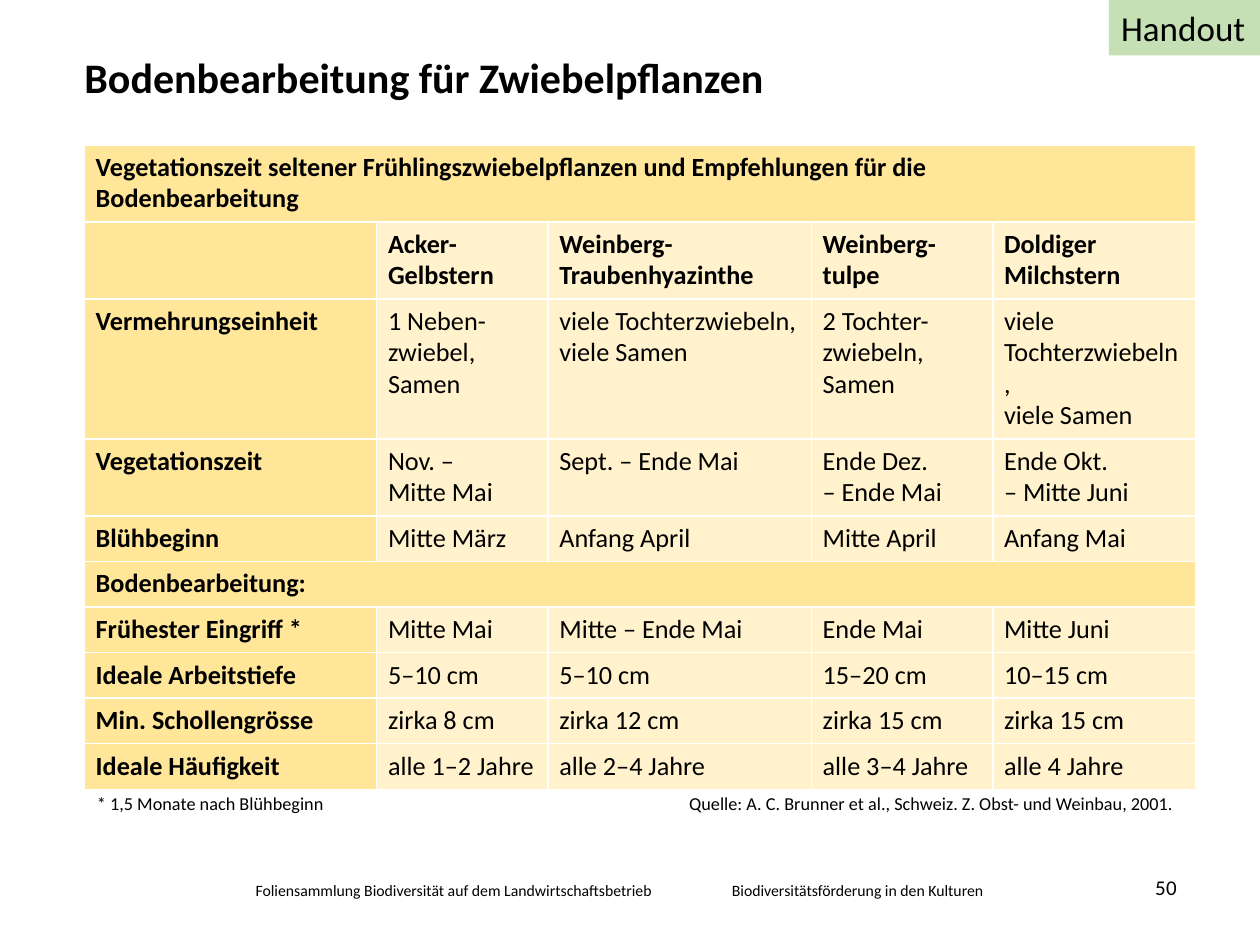
from dataclasses import dataclass

import pptx
import pptx.dml.color
import pptx.enum.shapes
import pptx.enum.text
import pptx.oxml
import pptx.oxml.ns
import pptx.util
from pptx.util import Inches

ALIGN = pptx.enum.text.PP_ALIGN
ANCHOR = pptx.enum.text.MSO_ANCHOR
FONT = "Calibri"
COLORS = {
    "text": "000000",
    "handout": "C5E0B4",
    "heading": "FFE699",
    "body": "FFF2CC",
    "border": "FFFFFF",
}


@dataclass
class Label:
    text: str
    left: float
    top: float
    width: float
    height: float
    size: float
    align: ALIGN = ALIGN.LEFT
    raised: bool = False
    wrap: bool = False


LABELS = [
    Label("Foliensammlung Biodiversität auf dem Landwirtschaftsbetrieb",
          1.93, 6.94, 3.46, 0.25, 9, wrap=True),
    Label("Biodiversitätsförderung in den Kulturen",
          5.71, 6.94, 2.28, 0.25, 9, wrap=True),
    Label("* 1,5 Monate nach Blühbeginn",
          0.67, 6.21, 2.32, 0.3, 18, ALIGN.JUSTIFY, raised=True),
    Label("Quelle: A. C. Brunner et al., Schweiz. Z. Obst- und Weinbau, 2001.",
          4.76, 6.21, 4.65, 0.3, 18, ALIGN.RIGHT, raised=True),
]

COLUMN_WIDTHS = [2.32, 1.36, 2.09, 1.44, 1.61]
ROW_HEIGHTS = [0.53, 0.42, 0.53, 0.53] + [0.33] * 6
# A row with a single entry spans the whole table
ROWS = [
    ["Vegetationszeit seltener Frühlingszwiebelpflanzen und Empfehlungen für die\n"
     "Bodenbearbeitung"],
    ["", "Acker-\nGelbstern", "Weinberg-\nTraubenhyazinthe", "Weinberg-tulpe",
     "Doldiger\nMilchstern"],
    ["Vermehrungseinheit", "1 Neben-zwiebel,\nSamen",
     "viele Tochterzwiebeln, viele Samen", "2 Tochter-\nzwiebeln,\nSamen",
     "viele\nTochterzwiebeln,\nviele Samen"],
    ["Vegetationszeit", "Nov. –\nMitte Mai", "Sept. – Ende Mai",
     "Ende Dez.\n– Ende Mai", "Ende Okt.\n– Mitte Juni"],
    ["Blühbeginn", "Mitte März", "Anfang April", "Mitte April", "Anfang Mai"],
    ["Bodenbearbeitung:"],
    ["Frühester Eingriff *", "Mitte Mai", "Mitte – Ende Mai", "Ende Mai", "Mitte Juni"],
    ["Ideale Arbeitstiefe", "5–10 cm", "5–10 cm", "15–20 cm", "10–15 cm"],
    ["Min. Schollengrösse", "zirka 8 cm", "zirka 12 cm", "zirka 15 cm", "zirka 15 cm"],
    ["Ideale Häufigkeit", "alle 1–2 Jahre", "alle 2–4 Jahre", "alle 3–4 Jahre",
     "alle 4 Jahre"],
]


def rgb(name: str) -> pptx.dml.color.RGBColor:
    return pptx.dml.color.RGBColor.from_string(COLORS[name])


def add_text(paragraph, text: str, size: float, bold: bool = False) -> None:
    for index, line in enumerate(text.split("\n")):
        if index:
            paragraph.add_line_break()
        run = paragraph.add_run()
        run.text = line
        run.font.name = FONT
        run.font.size = pptx.util.Pt(size)
        run.font.bold = bold
        run.font.color.rgb = rgb("text")


def add_label(slide, label: Label):
    shape = slide.shapes.add_textbox(
        Inches(label.left), Inches(label.top), Inches(label.width), Inches(label.height))
    shape.text_frame.word_wrap = label.wrap
    paragraph = shape.text_frame.paragraphs[0]
    paragraph.alignment = label.align
    add_text(paragraph, label.text, label.size)
    if label.raised:
        paragraph.runs[0].font._element.set("baseline", "30000")
    return shape


def set_borders(cell) -> None:
    properties = cell._tc.get_or_add_tcPr()
    for index, side in enumerate(("lnL", "lnR", "lnT", "lnB")):
        properties.insert(index, pptx.oxml.parse_xml(
            f'<a:{side} {pptx.oxml.ns.nsdecls("a")} w="12700"><a:solidFill>'
            f'<a:srgbClr val="{COLORS["border"]}"/></a:solidFill></a:{side}>'))


def fill_cell(cell, text: str, heading: bool, bold: bool) -> None:
    cell.fill.solid()
    cell.fill.fore_color.rgb = rgb("heading" if heading else "body")
    set_borders(cell)
    cell.margin_left = cell.margin_right = Inches(0.06)
    cell.margin_top = cell.margin_bottom = pptx.util.Pt(4)
    if text:
        paragraph = cell.text_frame.paragraphs[0]
        paragraph.line_spacing = pptx.util.Pt(18)
        properties = paragraph._p.get_or_add_pPr()
        properties.set("marL", str(Inches(0.03)))
        properties.set("marR", str(Inches(0.04)))
        add_text(paragraph, text, 15, bold)


def add_plant_table(slide) -> None:
    table = slide.shapes.add_table(
        len(ROWS), len(COLUMN_WIDTHS), Inches(0.67), Inches(1.15),
        Inches(sum(COLUMN_WIDTHS)), Inches(sum(ROW_HEIGHTS))).table
    table.first_row = table.horz_banding = False
    for column, width in zip(table.columns, COLUMN_WIDTHS):
        column.width = Inches(width)
    for row_index, (row, height) in enumerate(zip(ROWS, ROW_HEIGHTS)):
        table.rows[row_index].height = Inches(height)
        spanning = len(row) == 1
        if spanning:
            table.cell(row_index, 0).merge(table.cell(row_index, len(COLUMN_WIDTHS) - 1))
        for column_index in range(len(COLUMN_WIDTHS)):
            text = row[column_index] if column_index < len(row) else ""
            first = column_index == 0
            fill_cell(table.cell(row_index, column_index), text,
                      heading=first or spanning, bold=first or row_index == 1)


def add_title(slide) -> None:
    title = slide.shapes.title
    title.left, title.top = Inches(0.67), Inches(0.45)
    title.width, title.height = Inches(7.8), Inches(0.51)
    frame = title.text_frame
    frame.margin_left = frame.margin_right = frame.margin_top = frame.margin_bottom = 0
    frame.vertical_anchor = ANCHOR.TOP
    paragraph = frame.paragraphs[0]
    paragraph.alignment = ALIGN.LEFT
    paragraph.line_spacing = 0.9
    add_text(paragraph, "Bodenbearbeitung für Zwiebelpflanzen", 24, bold=True)


def add_handout_tag(slide) -> None:
    tag = slide.shapes.add_shape(
        pptx.enum.shapes.MSO_SHAPE.RECTANGLE, Inches(8.8), 0, Inches(1.2), Inches(0.44))
    tag.shadow.inherit = False
    tag.fill.solid()
    tag.fill.fore_color.rgb = rgb("handout")
    tag.line.fill.background()
    tag.text_frame.word_wrap = False
    tag.text_frame.vertical_anchor = ANCHOR.TOP
    paragraph = tag.text_frame.paragraphs[0]
    paragraph.alignment = ALIGN.LEFT
    add_text(paragraph, "Handout", 20)


def add_page_number(slide) -> None:
    shape = add_label(slide, Label("50", 8.47, 6.8, 0.87, 0.39, 12, ALIGN.RIGHT, wrap=True))
    frame = shape.text_frame
    frame.margin_left = frame.margin_right = 0
    frame.vertical_anchor = ANCHOR.BOTTOM
    frame.paragraphs[0].runs[0].font._element.set("spc", "20")


def main() -> None:
    presentation = pptx.Presentation()
    presentation.slide_width, presentation.slide_height = Inches(10), Inches(7.5)
    slide = presentation.slides.add_slide(presentation.slide_layouts[5])

    # Heading and tag
    add_title(slide)
    add_handout_tag(slide)

    # Table, notes below it and footer
    add_plant_table(slide)
    for label in LABELS:
        add_label(slide, label)
    add_page_number(slide)

    presentation.save("out.pptx")


if __name__ == "__main__":
    main()
